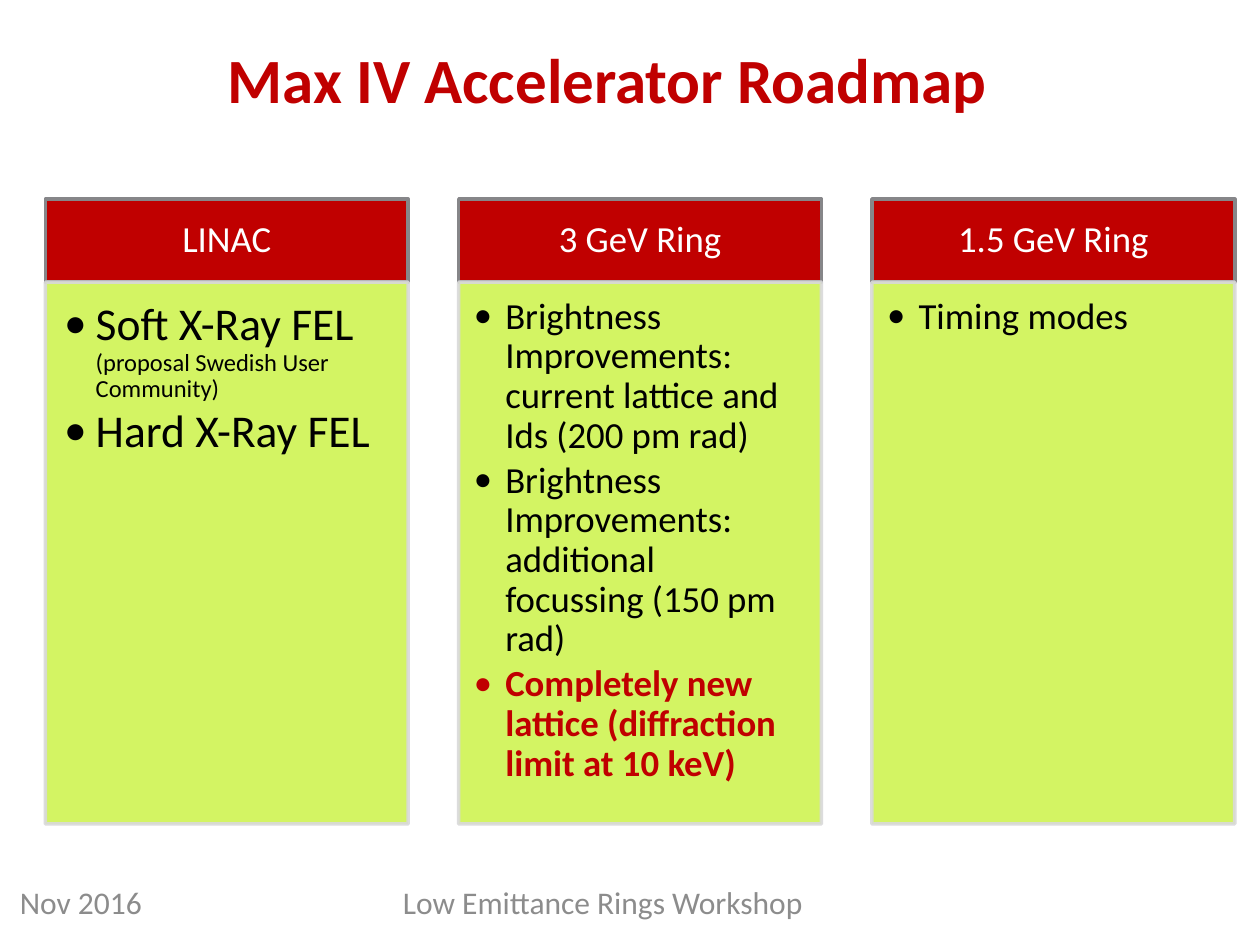
from lxml.etree import SubElement
from pptx import Presentation
from pptx.dml.color import RGBColor
from pptx.enum.shapes import MSO_SHAPE
from pptx.enum.text import MSO_ANCHOR, MSO_AUTO_SIZE, PP_ALIGN
from pptx.oxml.ns import qn
from pptx.util import Inches, Pt

RED = RGBColor(0xC0, 0x00, 0x00)
LIME = RGBColor(0xCF, 0xF3, 0x53)
HEADER_EDGE = RGBColor(0x86, 0x86, 0x89)
BODY_EDGE = RGBColor(0xD9, 0xD9, 0xDA)
FOOTER_GRAY = RGBColor(0x8C, 0x8C, 0x8C)
WHITE = RGBColor(0xFF, 0xFF, 0xFF)
BLACK = RGBColor(0x00, 0x00, 0x00)

LEFT, PITCH, WIDTH = 0.36, 3.28, 2.88
HEADER_TOP, HEADER_HEIGHT, BODY_HEIGHT = 1.58, 0.66, 4.3

# Each bullet is a list of runs: text, size, colour, bold.
COLUMNS = [
    ("LINAC", (0.15, 0.15, 0.2, 0.23), [
        [("Soft X-Ray FEL ", 26, BLACK, False),
         ("(proposal Swedish User Community)", 14, BLACK, False)],
        [("Hard X-Ray FEL", 26, BLACK, False)],
    ]),
    ("3 GeV Ring", (0.12, 0.12, 0.16, 0.18), [
        [("Brightness Improvements: current lattice and Ids (200 pm rad)", 21, BLACK, False)],
        [("Brightness Improvements: additional focussing (150 pm rad)", 21, BLACK, False)],
        [("Completely new lattice (diffraction limit at 10 keV)", 21, RED, True)],
    ]),
    ("1.5 GeV Ring", (0.12, 0.12, 0.16, 0.18), [
        [("Timing modes", 21, BLACK, False)],
    ]),
]


def add_run(paragraph, text, size, color, bold=False):
    run = paragraph.add_run()
    run.text = text
    for name, value in {"name": "Calibri", "size": Pt(size), "bold": bold}.items():
        setattr(run.font, name, value)
    run.font.color.rgb = color


def add_panel(slide, box, fill, edge, insets, anchor):
    """Add an outlined rectangle and return it, ready for text."""
    panel = slide.shapes.add_shape(MSO_SHAPE.RECTANGLE, *map(Inches, box))
    panel.shadow.inherit = False
    panel.fill.solid()
    panel.fill.fore_color.rgb = fill
    panel.line.color.rgb = edge
    panel.line.width = Pt(2)
    frame_format = {"word_wrap": True, "vertical_anchor": anchor}
    sides = ("margin_left", "margin_top", "margin_right", "margin_bottom")
    frame_format.update(zip(sides, map(Inches, insets)))
    for name, value in frame_format.items():
        setattr(panel.text_frame, name, value)
    return panel


prs = Presentation()
prs.slide_width, prs.slide_height = Inches(10), Inches(7.5)
slide = prs.slides.add_slide(prs.slide_layouts[5])

title = slide.shapes.title
title_place = {"left": 0.67, "top": 0.21, "width": 8.3, "height": 0.76}
for name, value in title_place.items():
    setattr(title, name, Inches(value))
title.text_frame.auto_size = MSO_AUTO_SIZE.NONE
title.text_frame.vertical_anchor = MSO_ANCHOR.BOTTOM
heading = title.text_frame.paragraphs[0]
heading.alignment = PP_ALIGN.CENTER
add_run(heading, "Max IV Accelerator Roadmap", 36, RED, True)

for column, (name, body_insets, bullets) in enumerate(COLUMNS):
    left = LEFT + column * PITCH
    header = add_panel(slide, (left, HEADER_TOP, WIDTH, HEADER_HEIGHT), RED,
                       HEADER_EDGE, (0.16, 0.09, 0.16, 0.09), MSO_ANCHOR.MIDDLE)
    label = header.text_frame.paragraphs[0]
    label.alignment = PP_ALIGN.CENTER
    label.line_spacing = 0.9
    add_run(label, name, 21, WHITE)

    body = add_panel(slide, (left, HEADER_TOP + HEADER_HEIGHT, WIDTH, BODY_HEIGHT),
                     LIME, BODY_EDGE, body_insets, MSO_ANCHOR.TOP)
    for color in body._element.spPr.iter(qn("a:srgbClr")):
        SubElement(color, qn("a:alpha"), val="90000")
    for index, runs in enumerate(bullets):
        frame = body.text_frame
        bullet = frame.add_paragraph() if index else frame.paragraphs[0]
        properties = bullet._p.get_or_add_pPr()
        properties.set("marL", str(Inches(0.25)))
        properties.set("indent", str(Inches(-0.25)))
        SubElement(properties, qn("a:buFont"), typeface="Calibri")
        SubElement(properties, qn("a:buChar"), char="•")
        bullet_format = {"level": 1, "alignment": PP_ALIGN.LEFT,
                         "line_spacing": 0.9, "space_after": Pt(3)}
        for key, value in bullet_format.items():
            setattr(bullet, key, value)
        for run in runs:
            add_run(bullet, *run)

for text, left, width, alignment in [
    ("Low Emittance Rings Workshop", 2.56, 4.45, PP_ALIGN.CENTER),
    ("Nov 2016", 0.06, 2.03, PP_ALIGN.LEFT),
]:
    footer = slide.shapes.add_textbox(Inches(left), Inches(6.96), Inches(width), Inches(0.4))
    footer.text_frame.word_wrap = True
    line = footer.text_frame.paragraphs[0]
    line.alignment = alignment
    add_run(line, text, 18, FOOTER_GRAY)

prs.save("out.pptx")
